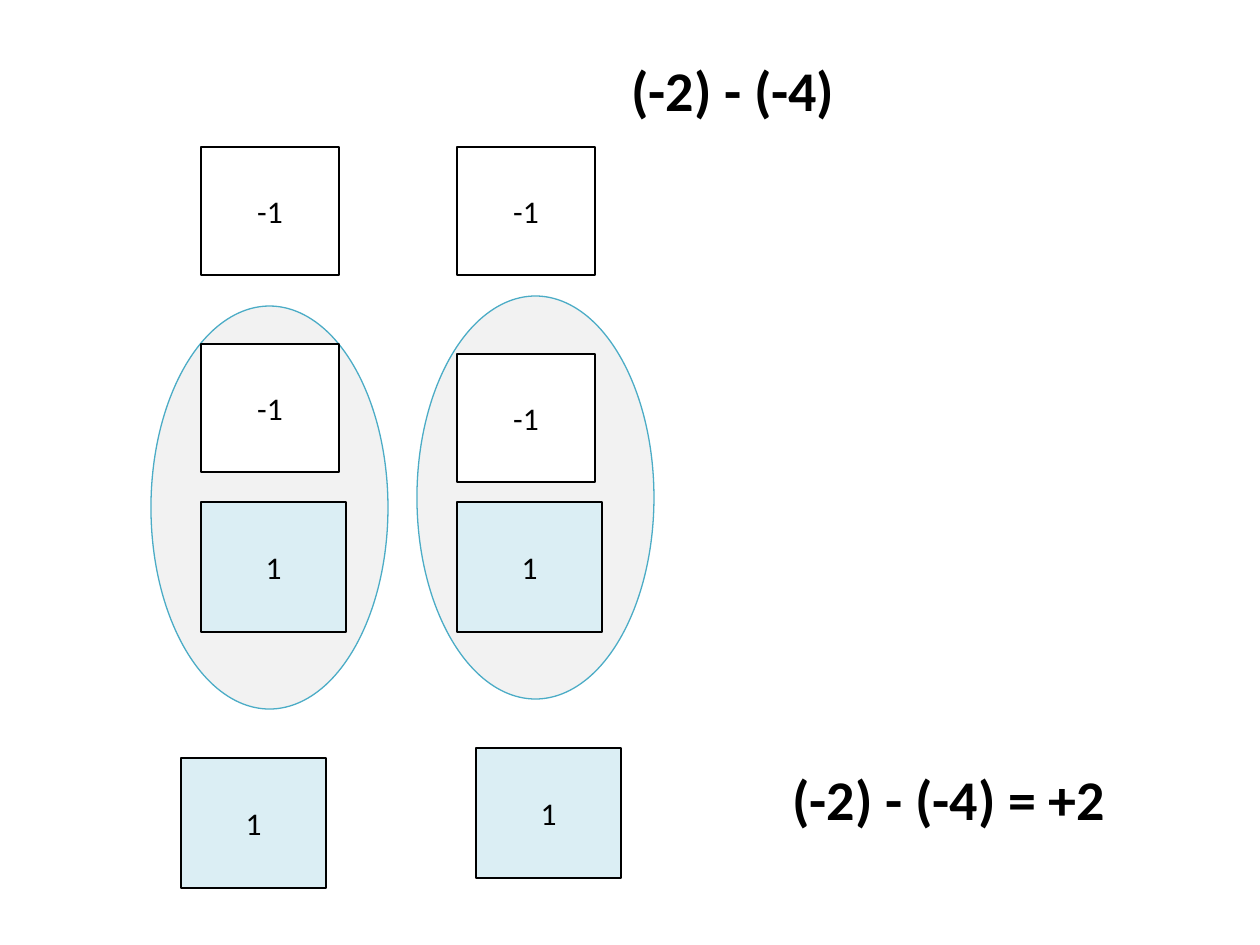
from pptx import Presentation, util as u
from pptx.dml.color import RGBColor
from pptx.enum import shapes, text

THEME = {
    "font": "Calibri", "ink": "000000", "line": 0.75,
    "tile_size": 18, "formula_size": 32,
    "pair_fill": "F2F2F2", "pair_line": "4BACC6",
}
TILES = {
    "-1": {"size": (138, 128), "fill": "FFFFFF",
           "places": [(457, 147), (201, 147), (457, 354), (201, 344)]},
    "1": {"size": (145, 130), "fill": "DBEEF4",
          "places": [(181, 758), (476, 748), (201, 502), (457, 502)]},
}
PAIR_SIZE = (403, 237)
PAIRS = [(334, 379), (68, 389)]
FORMULAS = [
    ("(-2) - (-4)", (595, 49, 276, 81)),
    ("(-2) - (-4) = +2", (723, 758, 452, 81)),
]


def px(*lengths):
    return [u.Emu(round(length * 914400 / 126)) for length in lengths]


def add_figure(slide, kind, box, fill, line):
    shape = slide.shapes.add_shape(kind, *px(*box))
    shape.shadow.inherit = False
    shape.fill.solid()
    shape.fill.fore_color.rgb = RGBColor.from_string(fill)
    shape.line.color.rgb = RGBColor.from_string(line)
    shape.line.width = u.Pt(THEME["line"])
    return shape


def write(shape, words, size, bold=False, wrap=False):
    frame = shape.text_frame
    frame.word_wrap = wrap
    paragraph = frame.paragraphs[0]
    paragraph.text = words
    paragraph.alignment = text.PP_ALIGN.CENTER
    font = paragraph.font
    font.name, font.size, font.bold = THEME["font"], u.Pt(size), bold
    font.color.rgb = RGBColor.from_string(THEME["ink"])
    return frame


def main():
    presentation = Presentation()
    presentation.slide_width, presentation.slide_height = px(1260, 945)
    slide = presentation.slides.add_slide(presentation.slide_layouts[6])

    for place in PAIRS:
        pair = add_figure(slide, shapes.MSO_SHAPE.OVAL, place + PAIR_SIZE,
                          THEME["pair_fill"], THEME["pair_line"])
        pair.rotation = 270

    for value, tile in TILES.items():
        for place in tile["places"]:
            shape = add_figure(slide, shapes.MSO_SHAPE.RECTANGLE, place + tile["size"],
                               tile["fill"], THEME["ink"])
            frame = write(shape, value, THEME["tile_size"])
            frame.vertical_anchor = text.MSO_ANCHOR.MIDDLE

    for formula, box in FORMULAS:
        shape = slide.shapes.add_textbox(*px(*box))
        frame = write(shape, formula, THEME["formula_size"], bold=True, wrap=True)
        frame.auto_size = text.MSO_AUTO_SIZE.SHAPE_TO_FIT_TEXT

    presentation.save("out.pptx")


if __name__ == "__main__":
    main()
